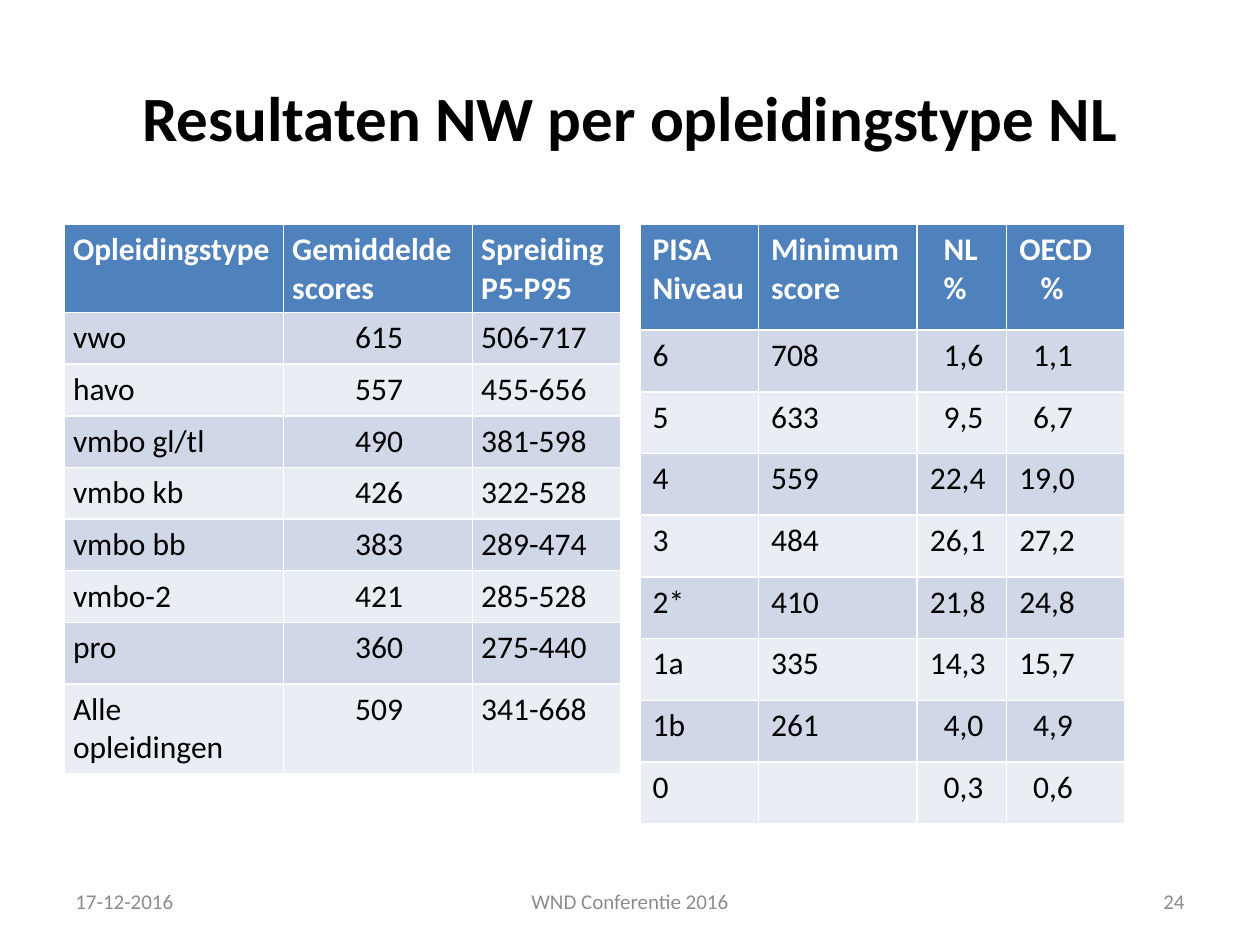
from pptx import Presentation
from pptx.dml.color import RGBColor
from pptx.enum.text import MSO_ANCHOR, PP_ALIGN
from pptx.util import Inches, Pt

LEFT, CENTER, RIGHT = PP_ALIGN.LEFT, PP_ALIGN.CENTER, PP_ALIGN.RIGHT
MIDDLE = MSO_ANCHOR.MIDDLE
FONT = "Calibri"
COLORS = {
    "header": "4F81BD",
    "band_dark": "D0D8E8",
    "band_light": "E9EDF4",
    "header_text": "FFFFFF",
    "text": "000000",
    "footer": "8C8C8C",
}

SCHOOL_ROWS = [
    ["Opleidingstype", "Gemiddelde\nscores", "Spreiding\nP5-P95"],
    ["vwo", "615", "506-717"],
    ["havo", "557", "455-656"],
    ["vmbo gl/tl", "490", "381-598"],
    ["vmbo kb", "426", "322-528"],
    ["vmbo bb", "383", "289-474"],
    ["vmbo-2", "421", "285-528"],
    ["pro", "360", "275-440"],
    ["Alle opleidingen", "509", "341-668"],
]
LEVEL_ROWS = [
    ["PISA\nNiveau", "Minimum\nscore", "NL\n%", "OECD\n%"],
    ["6", "708", "1,6", "1,1"],
    ["5", "633", "9,5", "6,7"],
    ["4", "559", "22,4", "19,0"],
    ["3", "484", "26,1", "27,2"],
    ["2*", "410", "21,8", "24,8"],
    ["1a", "335", "14,3", "15,7"],
    ["1b", "261", "4,0", "4,9"],
    ["0", "", "0,3", "0,6"],
]


def color(name):
    return RGBColor.from_string(COLORS[name])


def style_font(font, size, color_name, bold=False):
    font.name = FONT
    font.size = Pt(size)
    font.bold = bold
    font.color.rgb = color(color_name)


def school_indent(row, column, text):
    return 0.5 if row and column == 1 else 0


def level_indent(row, column, text):
    if column < 2:
        return 0
    if row == 0:
        return {"NL": 0.11, "OECD": 0}.get(text, 0.11 if column == 2 else 0.17)
    return 0.11 if len(text) == 3 else 0


def add_text(slide, box, text, size, color_name, alignment, bold=False):
    shape = slide.shapes.add_textbox(*map(Inches, box))
    frame = shape.text_frame
    frame.word_wrap = True
    frame.vertical_anchor = MIDDLE
    frame.text = text
    paragraph = frame.paragraphs[0]
    paragraph.alignment = alignment
    style_font(paragraph.font, size, color_name, bold)


def add_score_table(slide, box, rows, widths, heights, indent, margin):
    shape = slide.shapes.add_table(len(rows), len(widths), *map(Inches, box))
    table = shape.table
    for column, width in zip(table.columns, widths):
        column.width = Inches(width)
    for table_row, height in zip(table.rows, heights):
        table_row.height = Inches(height)
    for row, values in enumerate(rows):
        band = "band_dark" if row % 2 else "band_light"
        fill_name = band if row else "header"
        text_name = "text" if row else "header_text"
        for column, value in enumerate(values):
            cell = table.cell(row, column)
            cell.margin_left = cell.margin_right = Inches(margin)
            cell.margin_top = cell.margin_bottom = Inches(0.05)
            cell.fill.solid()
            cell.fill.fore_color.rgb = color(fill_name)
            cell.text = value
            for paragraph in cell.text_frame.paragraphs:
                style_font(paragraph.font, 18, text_name, row == 0)
                offset = Inches(indent(row, column, paragraph.text))
                if offset:
                    paragraph._p.get_or_add_pPr().set("marL", str(offset))


def add_footer(slide, left, top, width, height):
    side = 2.33
    middle = 3.17
    parts = [
        (0, side, "17-12-2016", LEFT),
        ((width - middle) / 2, middle, "WND Conferentie 2016", CENTER),
        (width - side, side, "24", RIGHT),
    ]
    for offset, part_width, text, alignment in parts:
        box = (left + offset, top, part_width, height)
        add_text(slide, box, text, 12, "footer", alignment)


def main():
    presentation = Presentation()
    presentation.slide_width = Inches(10)
    presentation.slide_height = Inches(7.5)
    slide = presentation.slides.add_slide(presentation.slide_layouts[6])

    add_text(slide, (0.5, 0.3, 9, 1.25), "Resultaten NW per opleidingstype NL",
             36, "text", CENTER, bold=True)
    add_score_table(slide, (0.51, 1.78, 4.42, 4.33), SCHOOL_ROWS,
                    [1.74, 1.5, 1.18], [0.41] * 7 + [0.49, 0.71],
                    school_indent, 0.07)
    add_score_table(slide, (5.08, 1.78, 3.86, 4.73), LEVEL_ROWS,
                    [0.94, 1.26, 0.71, 0.94], [0.84] + [0.49] * 8,
                    level_indent, 0.1)
    add_footer(slide, 0.5, 6.95, 9, 0.4)
    presentation.save("out.pptx")


if __name__ == "__main__":
    main()
